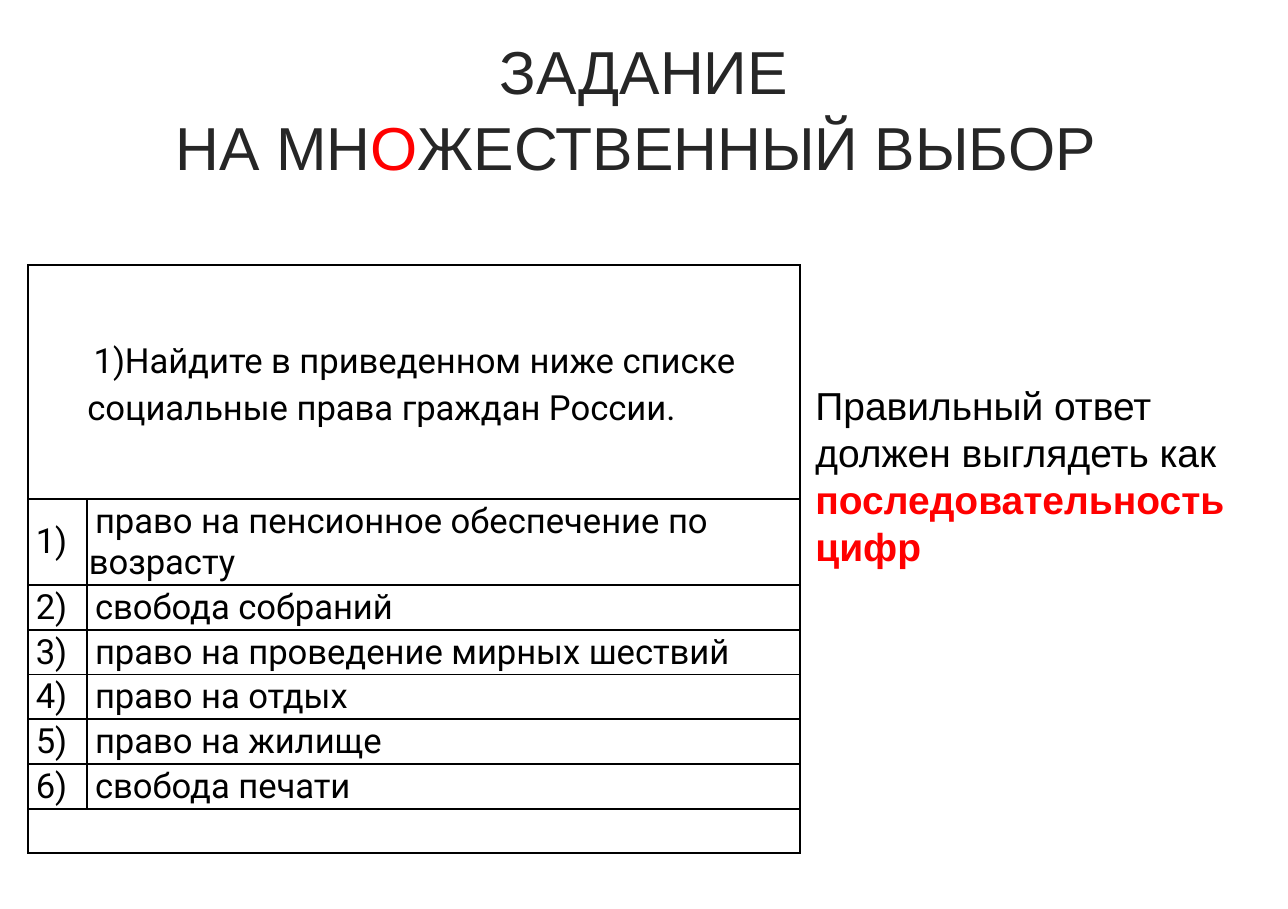
"""Build a slide with a multiple-choice question about social rights."""
from dataclasses import dataclass

from lxml.etree import SubElement
from pptx import Presentation
from pptx.dml.color import RGBColor
from pptx.enum.text import MSO_ANCHOR as Anchor, PP_ALIGN as Align
from pptx.oxml import parse_xml
from pptx.oxml.ns import nsdecls, qn
from pptx.util import Inches, Pt

WIDTH, HEIGHT = Inches(8.26), Inches(5.83)
BLACK, INK, RED = "000000", "262626", "FF0000"
QUESTION = "Найдите в приведенном ниже списке социальные права граждан России."
RIGHTS = [
    "право на пенсионное обеспечение по возрасту",
    "свобода собраний",
    "право на проведение мирных шествий",
    "право на отдых",
    "право на жилище",
    "свобода печати",
]
NUMBER_COLUMN, RIGHT_COLUMN = 4.6, 55.33
QUESTION_ROW, DOUBLE_ROW, SINGLE_ROW = 25.73, 9.3, 4.79


@dataclass(frozen=True)
class Phrase:
    """A piece of text with its colour and weight."""
    text: str
    color: str = BLACK
    bold: bool = False


@dataclass(frozen=True)
class TextBlock:
    """A text box placed by percentages of the slide's size."""
    left: float
    top: float
    width: float
    height: float
    size: int
    align: Align
    spacing: float
    lines: list[list[Phrase]]


HEADING = TextBlock(0, 2.57, 100, 17.84, 28, Align.CENTER, 1.04, [
    [Phrase("ЗАДАНИЕ", INK)],
    [Phrase("НА МН", INK), Phrase("О", RED), Phrase("ЖЕСТВЕННЫЙ ВЫБОР ", INK)],
])
ANSWER_HINT = TextBlock(62.11, 41.17, 37.89, 22.3, 18, Align.LEFT, 1, [
    [Phrase("Правильный ответ должен выглядеть как "),
     Phrase("последовательность цифр", RED, True)],
])


def across(percent: float) -> int:
    """Return a share of the slide's width."""
    return round(WIDTH * percent / 100)


def down(percent: float) -> int:
    """Return a share of the slide's height."""
    return round(HEIGHT * percent / 100)


def style(run, font: str, size: int, color: str = BLACK, bold: bool = False) -> None:
    """Set the font, size, colour and weight of a run."""
    run.font.name, run.font.size, run.font.bold = font, Pt(size), bold
    run.font.color.rgb = RGBColor.from_string(color)


def draw_block(slide, block: TextBlock) -> None:
    """Draw a text box phrase by phrase."""
    frame = slide.shapes.add_textbox(
        across(block.left), down(block.top), across(block.width), down(block.height)
    ).text_frame
    frame.word_wrap = True
    for index, line in enumerate(block.lines):
        paragraph = frame.add_paragraph() if index else frame.paragraphs[0]
        paragraph.alignment, paragraph.line_spacing = block.align, block.spacing
        for phrase in line:
            run = paragraph.add_run()
            run.text = phrase.text
            style(run, "Arial", block.size, phrase.color, phrase.bold)


def outline(cell) -> None:
    """Give a cell no fill and thin black borders."""
    cell.fill.background()
    properties = cell._tc.get_or_add_tcPr()
    for position, side in enumerate(("lnL", "lnR", "lnT", "lnB")):
        properties.insert(position, parse_xml(
            f'<a:{side} {nsdecls("a")} w="{Pt(1)}"><a:solidFill>'
            f'<a:srgbClr val="{BLACK}"/></a:solidFill></a:{side}>'))


def fill_cell(cell, text: str, inset: float = 0.01, indent: float = 0):
    """Write a cell's text and return its paragraph properties."""
    cell.vertical_anchor = Anchor.MIDDLE
    cell.margin_left = cell.margin_right = Inches(inset)
    cell.margin_top = cell.margin_bottom = Inches(inset)
    paragraph = cell.text_frame.paragraphs[0]
    paragraph.text = text
    for run in paragraph.runs:
        style(run, "Roboto", 16)
    if not text:
        ending = SubElement(paragraph._p, qn("a:endParaRPr"), sz="1600")
        SubElement(ending, qn("a:latin"), typeface="Roboto")
    properties = paragraph._p.get_or_add_pPr()
    properties.set("marL", str(Inches(indent)))
    properties.set("indent", str(Inches(0.04)))
    return properties


def draw_question(slide) -> None:
    """Draw the question table with its numbered rights."""
    columns = [NUMBER_COLUMN, RIGHT_COLUMN]
    rows = [QUESTION_ROW, DOUBLE_ROW] + [SINGLE_ROW] * len(RIGHTS)
    table = slide.shapes.add_table(
        len(rows), len(columns), across(2.18), down(29.16),
        across(sum(columns)), down(sum(rows))
    ).table
    table.first_row = table.horz_banding = False
    for column, share in zip(table.columns, columns):
        column.width = across(share)
    for row, share in zip(table.rows, rows):
        row.height = down(share)
    for cell in table.iter_cells():
        outline(cell)
    last = len(rows) - 1
    for row in (0, last):
        table.cell(row, 0).merge(table.cell(row, 1))

    question = table.cell(0, 0)
    numbering = fill_cell(question, QUESTION, 0, 0.38)
    question.text_frame.paragraphs[0].line_spacing = 1.15
    SubElement(numbering, qn("a:buFont"), typeface="Roboto")
    SubElement(numbering, qn("a:buAutoNum"), type="arabicParenR")
    tabs = SubElement(numbering, qn("a:tabLst"))
    SubElement(tabs, qn("a:tab"), pos=str(Inches(0.2)), algn="l")

    for number, right in enumerate(RIGHTS, 1):
        fill_cell(table.cell(number, 0), f"{number})")
        fill_cell(table.cell(number, 1), right)
    fill_cell(table.cell(last, 0), "")


def main() -> None:
    """Build and save the presentation."""
    deck = Presentation()
    deck.slide_width, deck.slide_height = WIDTH, HEIGHT
    slide = deck.slides.add_slide(deck.slide_layouts[6])
    for block in (HEADING, ANSWER_HINT):
        draw_block(slide, block)
    draw_question(slide)
    deck.save("out.pptx")


if __name__ == "__main__":
    main()
